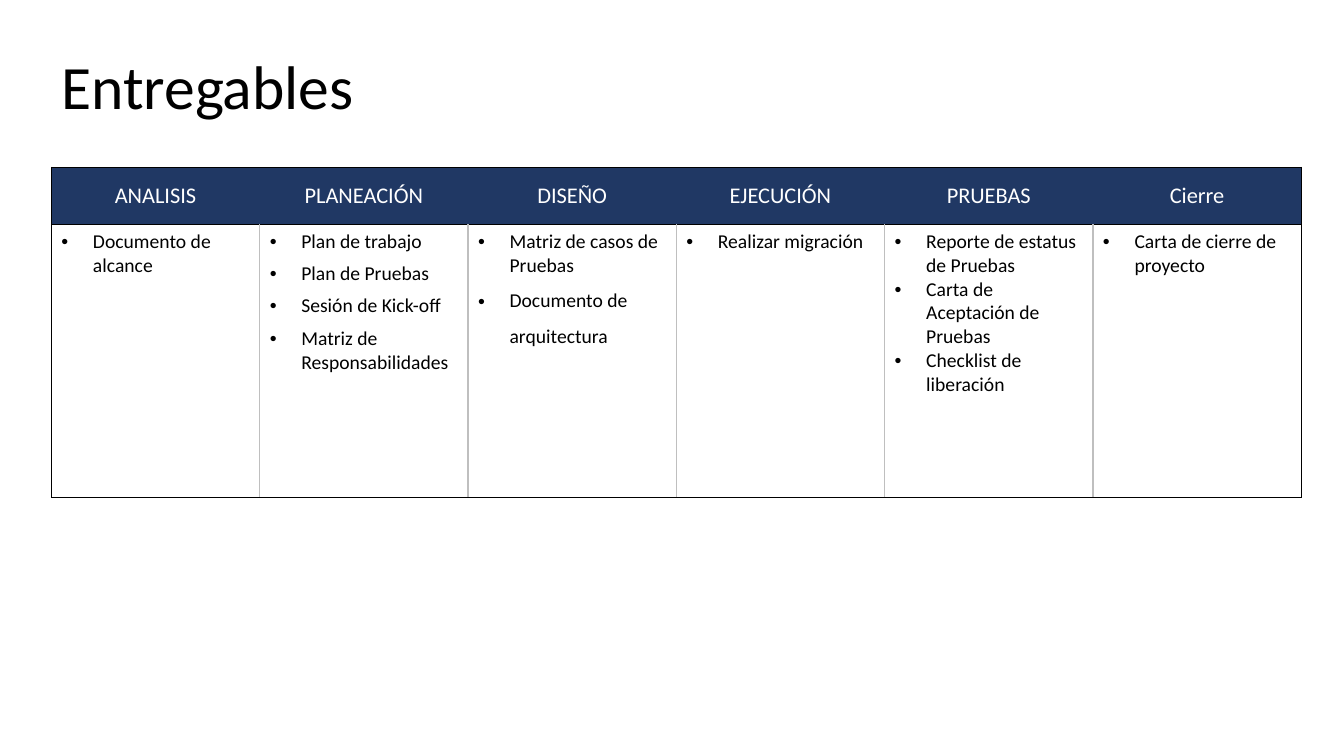
from lxml import etree
from pptx import Presentation
from pptx.dml.color import RGBColor
from pptx.enum.text import MSO_ANCHOR, PP_ALIGN
from pptx.oxml.ns import qn
from pptx.util import Pt

CENTER = PP_ALIGN.CENTER
LEFT = PP_ALIGN.LEFT
MIDDLE = MSO_ANCHOR.MIDDLE

TITLE = "Entregables"
PHASES = [
    ("ANALISIS", ["Documento de alcance"]),
    ("PLANEACIÓN", ["Plan de trabajo", "Plan de Pruebas", "Sesión de Kick-off",
                    "Matriz de Responsabilidades"]),
    ("DISEÑO", ["Matriz de casos de Pruebas", "Documento de arquitectura"]),
    ("EJECUCIÓN", ["Realizar migración"]),
    ("PRUEBAS", ["Reporte de estatus de Pruebas", "Carta de Aceptación de Pruebas",
                 "Checklist de liberación"]),
    ("Cierre", ["Carta de cierre de proyecto"]),
]
SPACE_BEFORE = {"PLANEACIÓN": 6}
LINE_SPACING = {"Documento de arquitectura": 1.5}

FONT = "Calibri"
NAVY, BLACK, WHITE, GRAY = "203864", "000000", "FFFFFF", "BFBFBF"
OUTER = (BLACK, 0.5)
DIVIDER = (GRAY, 1)
MARGIN = 36.72
TABLE_TOP = 119.5
COLUMN_WIDTH = 148.8
ROW_HEIGHTS = (41, 194.4)
BULLET_INDENT = 22.5


def color(value):
    return RGBColor.from_string(value)


def format_text(paragraph, size, value):
    for run in paragraph.runs:
        run.font.name = FONT
        run.font.size = Pt(size)
        run.font.bold = False
        run.font.color.rgb = color(value)


def add_bullet(paragraph):
    properties = paragraph._p.get_or_add_pPr()
    properties.set("marL", str(Pt(BULLET_INDENT)))
    properties.set("indent", str(-Pt(BULLET_INDENT)))
    etree.SubElement(properties, qn("a:buFont")).set("typeface", "Arial")
    etree.SubElement(properties, qn("a:buChar")).set("char", "•")


def set_borders(cell, left, right, top, bottom):
    properties = cell._tc.get_or_add_tcPr()
    sides = (("a:lnL", left), ("a:lnR", right), ("a:lnT", top), ("a:lnB", bottom))
    for position, (tag, border) in enumerate(sides):
        line = etree.Element(qn(tag))
        if border:
            value, width = border
            line.set("w", str(Pt(width)))
            fill = etree.SubElement(line, qn("a:solidFill"))
            etree.SubElement(fill, qn("a:srgbClr")).set("val", value)
        else:
            etree.SubElement(line, qn("a:noFill"))
        properties.insert(position, line)


def fill_header(cell, phase):
    cell.text_frame.text = phase
    cell.vertical_anchor = MIDDLE
    cell.fill.solid()
    cell.fill.fore_color.rgb = color(NAVY)
    paragraph = cell.text_frame.paragraphs[0]
    paragraph.alignment = CENTER
    format_text(paragraph, 16, WHITE)


def fill_deliverables(cell, phase, deliverables):
    cell.text_frame.text = "\n".join(deliverables)
    cell.fill.background()
    for index, paragraph in enumerate(cell.text_frame.paragraphs):
        add_bullet(paragraph)
        paragraph.alignment = LEFT
        if index and phase in SPACE_BEFORE:
            paragraph.space_before = Pt(SPACE_BEFORE[phase])
        if paragraph.text in LINE_SPACING:
            paragraph.line_spacing = LINE_SPACING[paragraph.text]
        format_text(paragraph, 14, BLACK)


def add_phase_table(slide):
    shape = slide.shapes.add_table(
        len(ROW_HEIGHTS), len(PHASES), Pt(MARGIN), Pt(TABLE_TOP),
        Pt(COLUMN_WIDTH * len(PHASES)), Pt(sum(ROW_HEIGHTS)))
    table = shape.table
    table.first_row = False
    table.horz_banding = False
    for row, height in zip(table.rows, ROW_HEIGHTS):
        row.height = Pt(height)
    last = len(PHASES) - 1
    for index, (phase, deliverables) in enumerate(PHASES):
        table.columns[index].width = Pt(COLUMN_WIDTH)
        header, body = table.cell(0, index), table.cell(1, index)
        fill_header(header, phase)
        fill_deliverables(body, phase, deliverables)
        for cell, inner in ((header, None), (body, DIVIDER)):
            left = OUTER if index == 0 else inner
            right = OUTER if index == last else inner
            set_borders(cell, left, right, OUTER, OUTER)


def add_title(slide):
    box = slide.shapes.add_textbox(Pt(MARGIN), Pt(11.5), Pt(828), Pt(104.4))
    frame = box.text_frame
    frame.word_wrap = True
    frame.vertical_anchor = MIDDLE
    frame.text = TITLE
    paragraph = frame.paragraphs[0]
    paragraph.line_spacing = 0.9
    format_text(paragraph, 44, BLACK)


def main():
    presentation = Presentation()
    presentation.slide_width = Pt(960)
    presentation.slide_height = Pt(540)
    slide = presentation.slides.add_slide(presentation.slide_layouts[6])
    add_phase_table(slide)
    add_title(slide)
    presentation.save("out.pptx")


if __name__ == "__main__":
    main()
